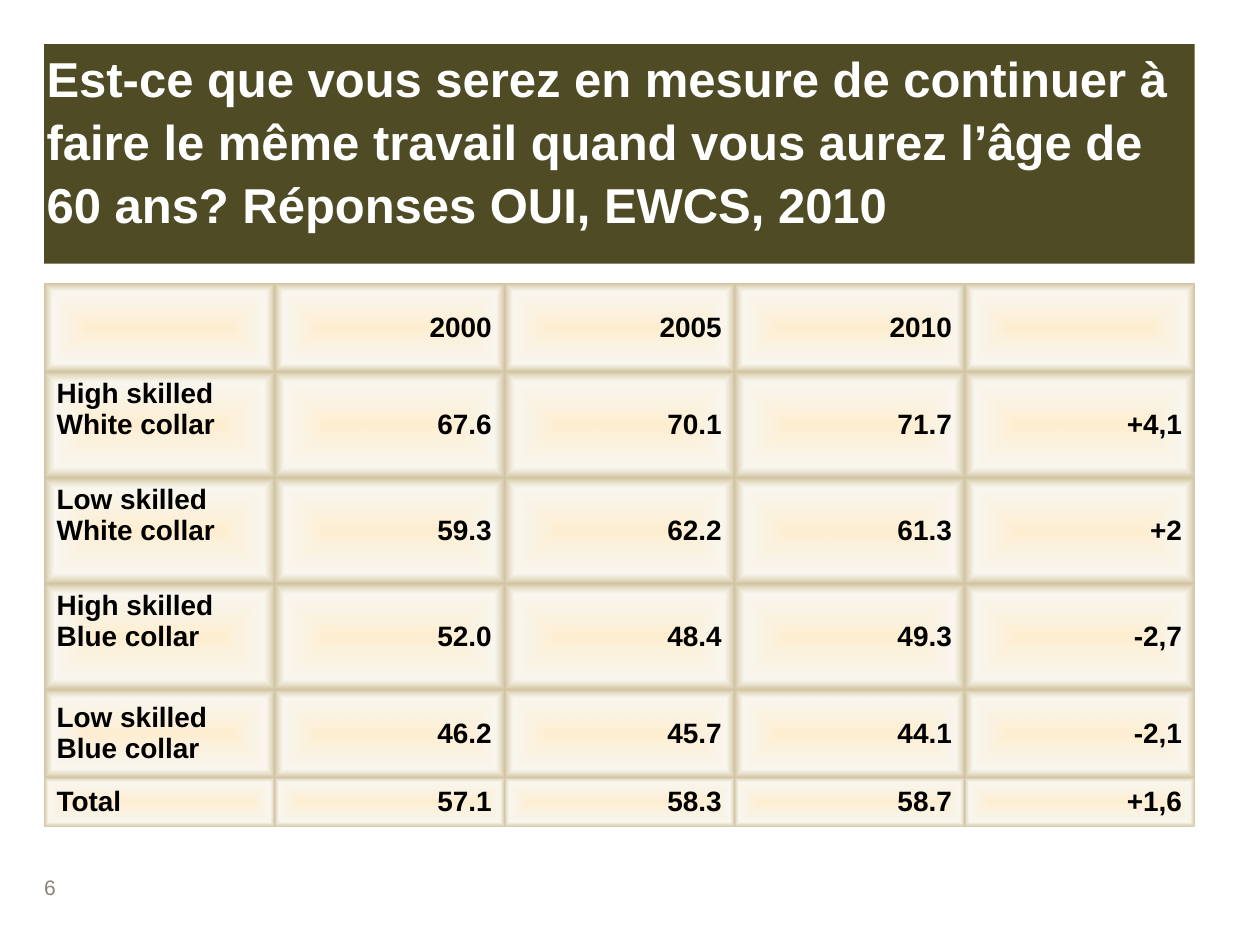
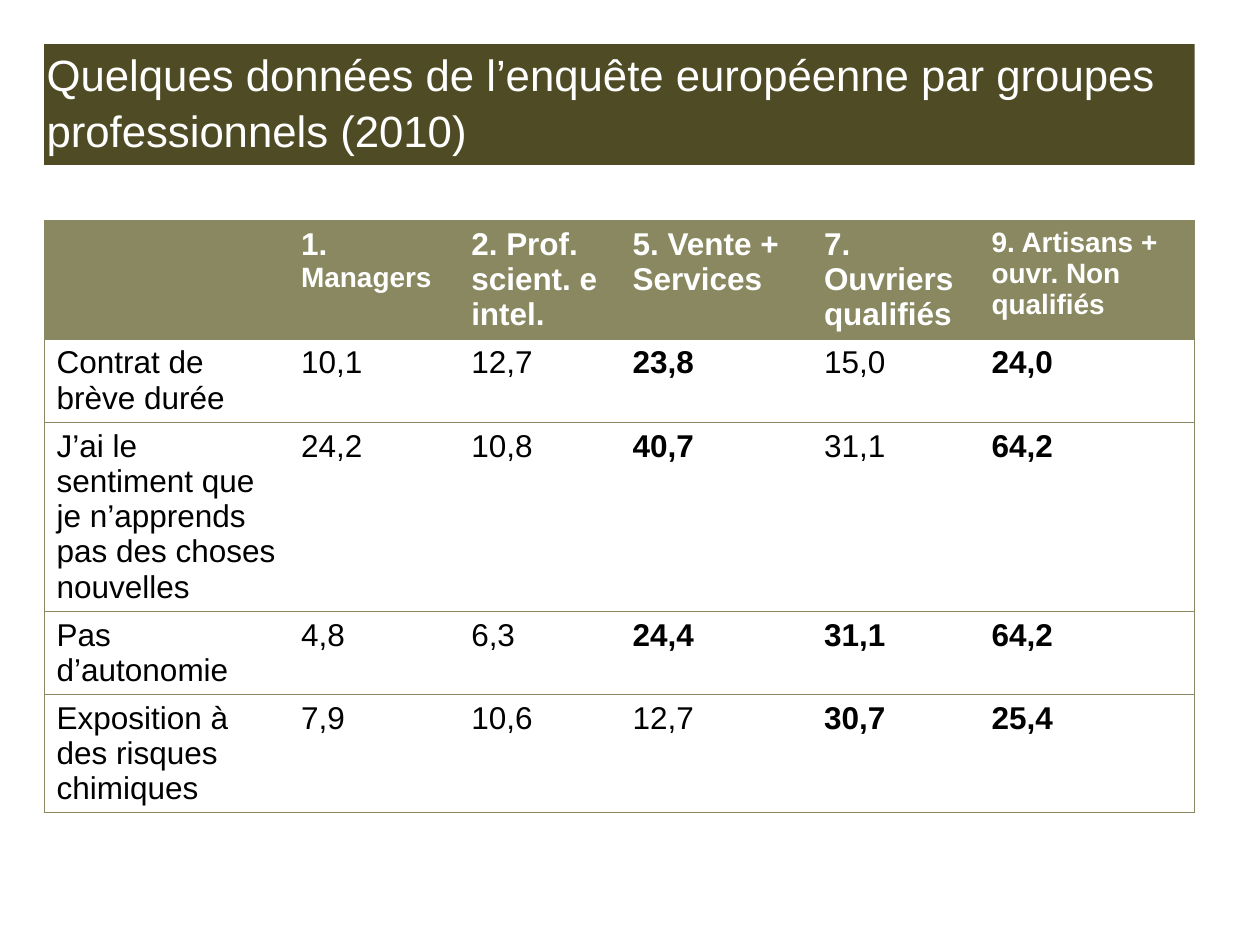
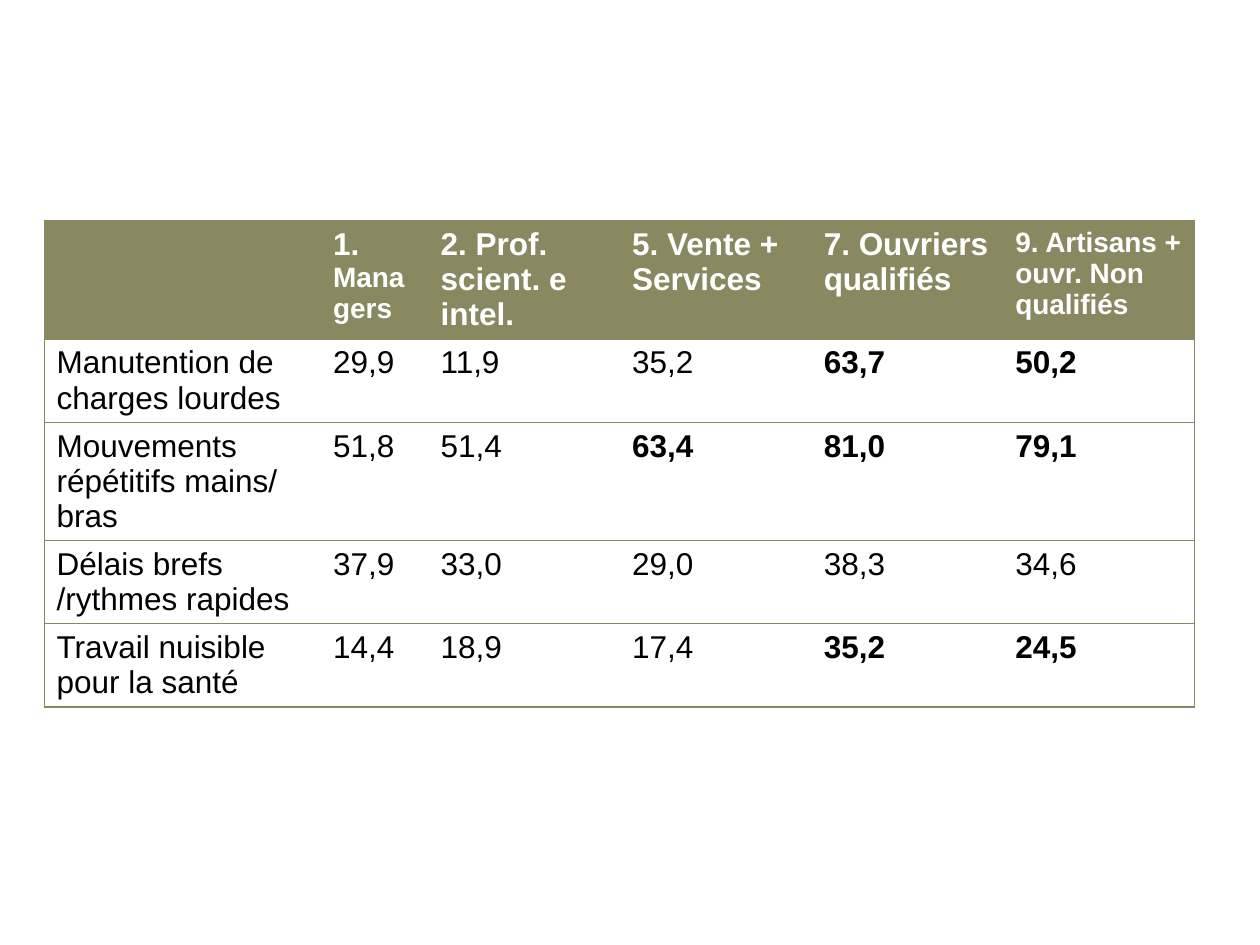
from dataclasses import dataclass

from lxml import etree
from pptx import Presentation
from pptx.dml.color import RGBColor
from pptx.enum.text import MSO_ANCHOR, MSO_AUTO_SIZE, PP_ALIGN
from pptx.oxml.ns import qn
from pptx.util import Pt

TOP, MIDDLE, BOTTOM = MSO_ANCHOR.TOP, MSO_ANCHOR.MIDDLE, MSO_ANCHOR.BOTTOM
LEFT, RIGHT = PP_ALIGN.LEFT, PP_ALIGN.RIGHT
NO_FIT = MSO_AUTO_SIZE.NONE

WHITE = RGBColor(0xFF, 0xFF, 0xFF)
BLACK = RGBColor(0x00, 0x00, 0x00)
DARK = RGBColor(0x4F, 0x4C, 0x25)
OLIVE = RGBColor(0x89, 0x88, 0x60)
GREY = RGBColor(0x8D, 0x81, 0x7B)
CREAM = RGBColor(0xFF, 0xEF, 0xD1)
PALE = RGBColor(0xF6, 0xF2, 0xE5)
SAND = RGBColor(0xD1, 0xC3, 0x9F)

FONT = "Arial"
EDGE = 25.2
WIDTH = 657.4
NO_STYLE = "{2D5ABB26-0587-4C30-8999-92F81FD0307C}"
TITLE_ONLY, BLANK = 5, 6

# Gradient stops: percent, colour, opacity in percent
GLOW = ((0, CREAM, 100), (80, PALE, 62), (100, SAND, 100))


@dataclass
class Row:
    label: str
    values: tuple[str, ...]
    height: float
    bold: tuple[int, ...] = ()
    anchor: MSO_ANCHOR = MIDDLE


# Row heights for labels of two, three and five lines
TWO, THREE, FIVE = 47.4, 67.5, 107.8

SKILLS = (
    Row("", ("2000", "2005", "2010", ""), 50.5),
    Row("High skilled White collar", ("67.6", "70.1", "71.7", "+4,1"), 60.5, anchor=TOP),
    Row("Low skilled White collar", ("59.3", "62.2", "61.3", "+2"), 60.5, anchor=TOP),
    Row("High skilled Blue collar", ("52.0", "48.4", "49.3", "-2,7"), 60.5, anchor=TOP),
    Row("Low skilled Blue collar", ("46.2", "45.7", "44.1", "-2,1"), 50.5),
    Row("Total", ("57.1", "58.3", "58.7", "+1,6"), 28),
)
SURVEY = (
    Row("Contrat de brève durée", ("10,1", "12,7", "23,8", "15,0", "24,0"), TWO, (3, 5)),
    Row("J’ai le sentiment que je n’apprends pas des choses nouvelles",
        ("24,2", "10,8", "40,7", "31,1", "64,2"), FIVE, (3, 5)),
    Row("Pas d’autonomie", ("4,8", "6,3", "24,4", "31,1", "64,2"), TWO, (3, 4, 5)),
    Row("Exposition à des risques chimiques",
        ("7,9", "10,6", "12,7", "30,7", "25,4"), THREE, (4, 5)),
)
STRAIN = (
    Row("Manutention de charges lourdes",
        ("29,9", "11,9", "35,2", "63,7", "50,2"), TWO, (4, 5)),
    Row("Mouvements répétitifs mains/ bras",
        ("51,8", "51,4", "63,4", "81,0", "79,1"), THREE, (3, 4, 5)),
    Row("Délais brefs /rythmes rapides", ("37,9", "33,0", "29,0", "38,3", "34,6"), TWO),
    Row("Travail nuisible pour la santé",
        ("14,4", "18,9", "17,4", "35,2", "24,5"), TWO, (4, 5)),
)
# Each heading is a list of runs: text and size
HEADS = (
    (),
    (("1. ", 18), ("Managers", 16)),
    (("2. Prof. scient. e intel.", 18),),
    (("5. Vente + Services", 18),),
    (("7. Ouvriers qualifiés", 18),),
    (("9. Artisans + ouvr. Non qualifiés", 16),),
)


def style(para, size: float, color: RGBColor, bold: bool = False, align=LEFT) -> None:
    para.alignment = align
    font = para.font
    font.name, font.size, font.bold = FONT, Pt(size), bold
    font.color.rgb = color


def add_title(slide, text: str, height: float, size: float, bold: bool) -> None:
    title = slide.shapes.title
    title.left, title.top = Pt(EDGE), Pt(EDGE)
    title.width, title.height = Pt(WIDTH), Pt(height)
    title.fill.solid()
    title.fill.fore_color.rgb = DARK
    frame = title.text_frame
    frame.text = text
    frame.auto_size = NO_FIT
    frame.vertical_anchor = TOP
    frame.margin_left = frame.margin_right = Pt(1.44)
    frame.margin_top = frame.margin_bottom = 0
    para = frame.paragraphs[0]
    para.line_spacing = 1.07
    style(para, size, WHITE, bold)


def add_number(slide, text: str) -> None:
    box = slide.shapes.add_textbox(Pt(EDGE), Pt(488.9), Pt(28), Pt(25.2))
    frame = box.text_frame
    frame.word_wrap = True
    frame.vertical_anchor = BOTTOM
    frame.margin_left = frame.margin_right = 0
    frame.margin_top = frame.margin_bottom = 0
    frame.text = text
    style(frame.paragraphs[0], 12, GREY)


def add_grid(slide, top: float, widths: list[float], heights: list[float]):
    """Add a table without style and return it."""
    frame = slide.shapes.add_table(len(heights), len(widths), Pt(EDGE), Pt(top),
                                   Pt(sum(widths)), Pt(sum(heights)))
    table = frame.table
    table.first_row = table.horz_banding = False
    table._tbl.tblPr.find(qn("a:tableStyleId")).text = NO_STYLE
    for col, width in zip(table.columns, widths):
        col.width = Pt(width)
    for row, height in zip(table.rows, heights):
        row.height = Pt(height)
    return table


def fill_glow(cell) -> None:
    """Fill a cell with the gradient that runs from its centre to its edges."""
    grad = etree.SubElement(cell._tc.get_or_add_tcPr(), qn("a:gradFill"))
    stops = etree.SubElement(grad, qn("a:gsLst"))
    for place, color, alpha in GLOW:
        stop = etree.SubElement(stops, qn("a:gs"), pos=str(place * 1000))
        tint = etree.SubElement(stop, qn("a:srgbClr"), val=str(color))
        if alpha < 100:
            etree.SubElement(tint, qn("a:alpha"), val=str(alpha * 1000))
    shade = etree.SubElement(grad, qn("a:path"), path="shape")
    etree.SubElement(shade, qn("a:fillToRect"), dict.fromkeys("ltrb", "50000"))


def add_line(cell, side: str) -> None:
    """Draw one border of a cell: L, R, T or B."""
    line = etree.SubElement(cell._tc.get_or_add_tcPr(), qn(f"a:ln{side}"), w=str(Pt(0.75)))
    fill = etree.SubElement(line, qn("a:solidFill"))
    etree.SubElement(fill, qn("a:srgbClr"), val=str(OLIVE))


def add_skills(slide) -> None:
    table = add_grid(slide, 162, [WIDTH / 5] * 5, [row.height for row in SKILLS])
    for r, row in enumerate(SKILLS):
        for c, text in enumerate((row.label, *row.values)):
            cell = table.cell(r, c)
            cell.vertical_anchor = MIDDLE if c else row.anchor
            cell.text = text
            style(cell.text_frame.paragraphs[0], 16, BLACK, True, RIGHT if c else LEFT)
            fill_glow(cell)


def add_survey(slide, rows: tuple[Row, ...], widths: list[float]) -> None:
    """Add a table with the job groups as headings."""
    table = add_grid(slide, 126, widths, [THREE] + [row.height for row in rows])
    last = len(widths) - 1
    for c, runs in enumerate(HEADS):
        para = table.cell(0, c).text_frame.paragraphs[0]
        style(para, 18, WHITE, True)
        for text, size in runs:
            run = para.add_run()
            run.text = text
            run.font.size = Pt(size)
    for r, row in enumerate(rows, 1):
        for c, text in enumerate((row.label, *row.values)):
            cell = table.cell(r, c)
            cell.text = text
            style(cell.text_frame.paragraphs[0], 18, BLACK, c in row.bold)
    for r in range(len(rows) + 1):
        for c in range(last + 1):
            cell = table.cell(r, c)
            sides = ("L" if c == 0 else "") + ("R" if c == last else "") + "TB"
            for side in sides:
                add_line(cell, side)
            if r == 0:
                cell.fill.solid()
                cell.fill.fore_color.rgb = OLIVE
            else:
                cell.fill.background()


def main() -> None:
    deck = Presentation()
    deck.slide_width, deck.slide_height = Pt(720), Pt(540)
    layouts = deck.slide_layouts

    slide = deck.slides.add_slide(layouts[TITLE_ONLY])
    add_title(slide, "Est-ce que vous serez en mesure de continuer à faire le même travail "
              "quand vous aurez l’âge de 60 ans? Réponses OUI, EWCS, 2010", 125.5, 28, True)
    add_skills(slide)
    add_number(slide, "6")

    slide = deck.slides.add_slide(layouts[TITLE_ONLY])
    add_title(slide, "Quelques données de l’enquête européenne par groupes "
              "professionnels (2010)", 69, 25, False)
    add_survey(slide, SURVEY, [139.7, 97.2, 92.2, 109.4, 95.8, 123.1])

    slide = deck.slides.add_slide(layouts[BLANK])
    add_survey(slide, STRAIN, [158, 61.4] + [109.5] * 4)

    deck.save("out.pptx")


if __name__ == "__main__":
    main()
